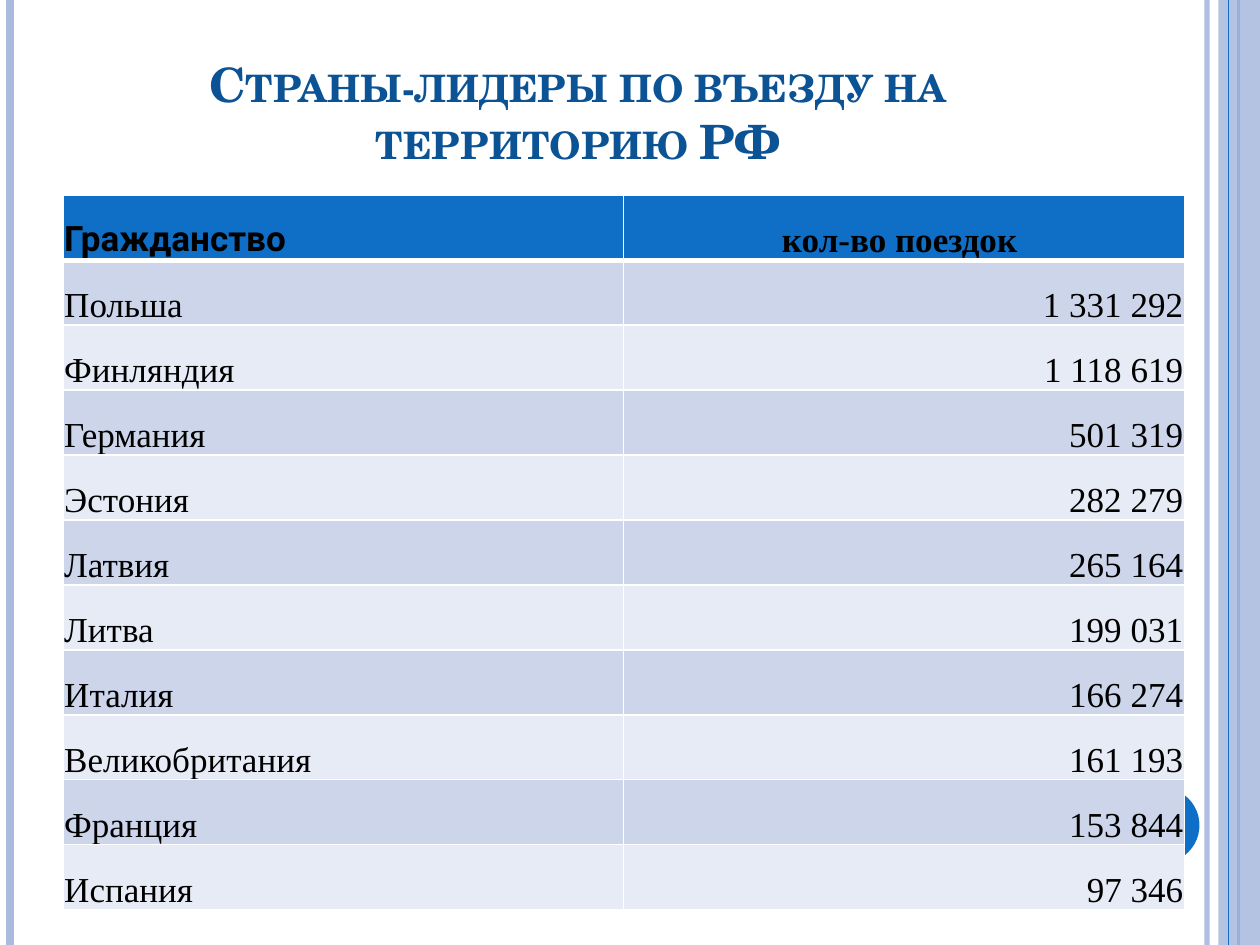
from dataclasses import dataclass

from lxml.etree import SubElement
from pptx import Presentation
from pptx.dml.color import RGBColor as Rgb
from pptx.enum.shapes import MSO_CONNECTOR as Connector, MSO_SHAPE as Shape
from pptx.enum.text import MSO_ANCHOR as Anchor, PP_ALIGN as Align
from pptx.oxml.ns import qn
from pptx.util import Inches, Pt


@dataclass(frozen=True)
class Theme:
    """Colours, fonts and type sizes of the slide."""
    accent: str = "0F6FC6"
    pale: str = "ABBBDF"
    heading: str = "0B5394"
    ink: str = "000000"
    grid: str = "FFFFFF"
    bands: tuple = ("CCD5EA", "E7EBF5")
    heading_font: str = "TeX Gyre Schola"
    label_font: str = "Roboto"
    body_font: str = "Times New Roman"
    heading_size: int = 27
    body_size: int = 20


THEME = Theme()
HEADING = "Страны-лидеры по въезду на территорию РФ"
HEADER = ("Гражданство", "кол-во поездок ")
TRIPS = (
    ("Польша", "1 331 292"),
    ("Финляндия", "1 118 619"),
    ("Германия", "501 319"),
    ("Эстония", "282 279"),
    ("Латвия", "265 164"),
    ("Литва", "199 031"),
    ("Италия", "166 274"),
    ("Великобритания", "161 193"),
    ("Франция", "153 844"),
    ("Испания", "97 346"),
)


def apply_format(target, values):
    """Set every attribute named in values on target."""
    for name, value in values.items():
        setattr(target, name, value)


def set_opacity(fill_parent, percent):
    """Give the solid colour inside fill_parent an opacity."""
    colour = fill_parent.find(".//" + qn("a:srgbClr"))
    SubElement(colour, qn("a:alpha"), val=str(percent * 1000))


def write_text(frame, text, font, size, colour, bold, align):
    """Write one formatted paragraph and return its run."""
    paragraph = frame.paragraphs[0]
    paragraph.alignment = align
    run = paragraph.add_run()
    run.text = text
    apply_format(run.font, {"name": font, "size": Pt(size), "bold": bold})
    run.font.color.rgb = Rgb.from_string(colour)
    return run


def add_stripe(slide, x, colour, width, opacity=100):
    """Draw a vertical line over the full slide height."""
    stripe = slide.shapes.add_connector(
        Connector.STRAIGHT, Inches(x), 0, Inches(x), Inches(7.5))
    stripe.line.color.rgb = Rgb.from_string(colour)
    stripe.line.width = Pt(width)
    properties = stripe._element.spPr
    if opacity < 100:
        set_opacity(properties, opacity)
    SubElement(properties, qn("a:effectLst"))


def add_ornament(slide, preset, box, colour, opacity=100):
    """Draw a filled shape without an outline."""
    ornament = slide.shapes.add_shape(preset, *map(Inches, box))
    ornament.shadow.inherit = False
    ornament.fill.solid()
    ornament.fill.fore_color.rgb = Rgb.from_string(colour)
    ornament.line.fill.background()
    if opacity < 100:
        set_opacity(ornament._element.spPr, opacity)


def add_heading(slide):
    """Add the centred heading in small capitals."""
    box = map(Inches, (0.5, 0.3, 8.17, 1.09))
    frame = slide.shapes.add_textbox(*box).text_frame
    apply_format(frame, {"word_wrap": True, "vertical_anchor": Anchor.BOTTOM})
    run = write_text(frame, HEADING, THEME.heading_font, THEME.heading_size,
                     THEME.heading, True, Align.CENTER)
    run.font._element.set("cap", "small")


def add_borders(cell, bottom):
    """Draw the grid lines around a cell."""
    properties = cell._tc.get_or_add_tcPr()
    for side, width in (("L", 1), ("R", 1), ("T", 1), ("B", bottom)):
        border = SubElement(properties, qn(f"a:ln{side}"), w=str(Pt(width)))
        solid = SubElement(border, qn("a:solidFill"))
        SubElement(solid, qn("a:srgbClr"), val=THEME.grid)


def fill_cell(cell, text, fill, font, bold, align, bottom=1):
    """Format one table cell and write its text."""
    apply_format(cell, {
        "vertical_anchor": Anchor.BOTTOM,
        "margin_left": Inches(0.01),
        "margin_top": Inches(0.01),
        "margin_right": Inches(0.01),
        "margin_bottom": 0,
    })
    add_borders(cell, bottom)
    cell.fill.solid()
    cell.fill.fore_color.rgb = Rgb.from_string(fill)
    write_text(cell.text_frame, text, font, THEME.body_size, THEME.ink, bold, align)


def add_trips_table(slide):
    """Add the table of trips by citizenship."""
    box = map(Inches, (0.5, 1.55, 8.9, 5.67))
    trips = slide.shapes.add_table(len(TRIPS) + 1, len(HEADER), *box).table
    apply_format(trips, {"first_row": False, "horz_banding": False})
    fonts = (THEME.label_font, THEME.body_font)
    for column, (label, font, align) in enumerate(
            zip(HEADER, fonts, (Align.LEFT, Align.CENTER))):
        fill_cell(trips.cell(0, column), label, THEME.accent, font, True, align, 3)
    for row, record in enumerate(TRIPS, 1):
        band = THEME.bands[(row - 1) % 2]
        for column, (value, align) in enumerate(
                zip(record, (Align.LEFT, Align.RIGHT))):
            fill_cell(trips.cell(row, column), value, band, THEME.body_font,
                      False, align, 1)


def main():
    """Build the slide and save it."""
    deck = Presentation()
    apply_format(deck, {"slide_width": Inches(10), "slide_height": Inches(7.5)})
    slide = deck.slides.add_slide(deck.slide_layouts[6])
    add_stripe(slide, 9.58, THEME.pale, 3, 93)
    add_stripe(slide, 0.08, THEME.pale, 4.5)
    add_stripe(slide, 9.83, THEME.accent, 1.5)
    add_ornament(slide, Shape.RECTANGLE, (9.67, 0, 0.33, 7.5), THEME.pale, 87)
    add_stripe(slide, 9.75, THEME.accent, 0.75)
    add_ornament(slide, Shape.OVAL, (8.92, 6.25, 0.6, 0.6), THEME.accent)
    add_heading(slide)
    add_trips_table(slide)
    deck.save("out.pptx")


if __name__ == "__main__":
    main()
